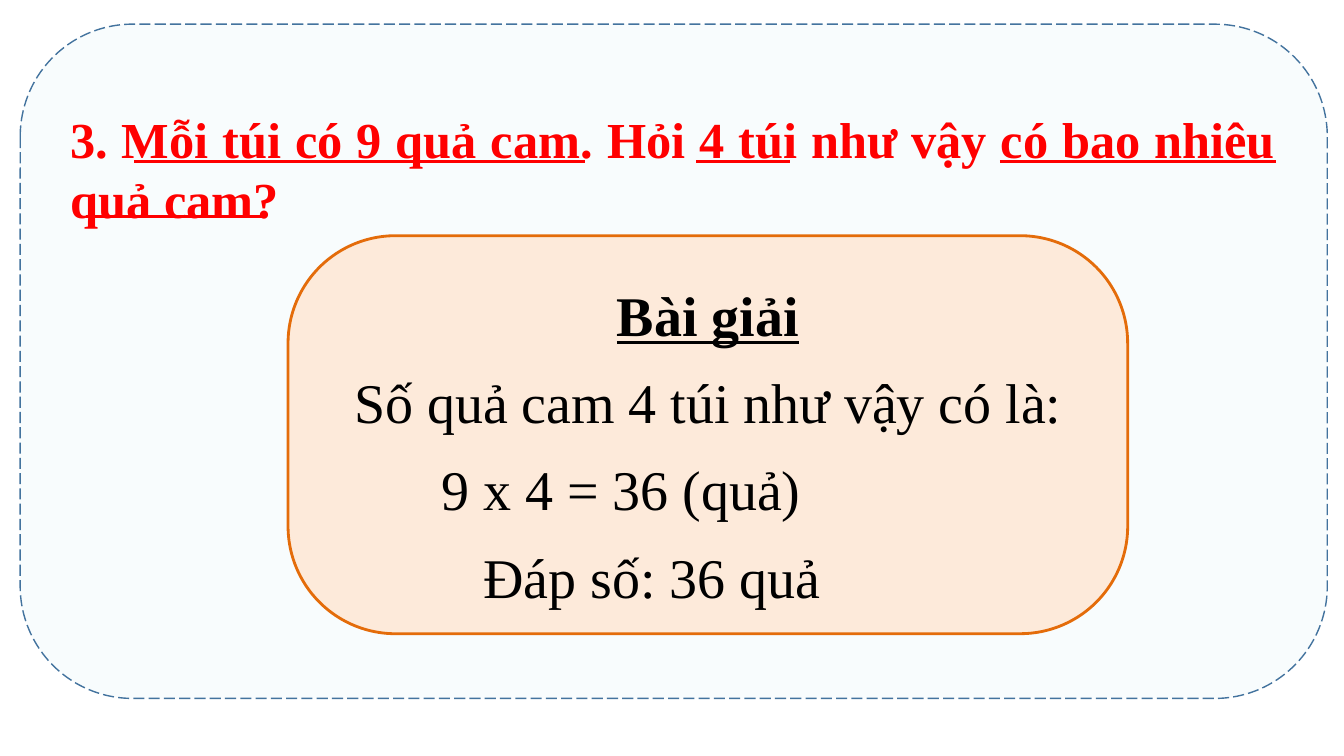
from dataclasses import dataclass

from lxml.etree import SubElement
from pptx import Presentation
from pptx.dml.color import RGBColor
from pptx.enum.dml import MSO_LINE
from pptx.enum.shapes import MSO_CONNECTOR, MSO_SHAPE
from pptx.enum.text import MSO_ANCHOR, MSO_AUTO_SIZE, PP_ALIGN
from pptx.oxml.ns import qn
from pptx.util import Cm, Pt


@dataclass(frozen=True)
class Theme:
    font: str = "Times New Roman"
    question_size: int = 36
    answer_size: int = 40
    red: str = "FF0000"
    black: str = "000000"
    panel_fill: str = "F8FCFD"
    panel_line: str = "43739E"
    answer_fill: str = "FDEADA"
    answer_line: str = "E46C0A"


THEME = Theme()

# Content: the word problem and its solution
QUESTION = "3. Mỗi túi có 9 quả cam. Hỏi 4 túi như vậy có bao nhiêu quả cam?"
SOLUTION = [
    ("Bài giải", dict(bold=True, underline=True, align=PP_ALIGN.CENTER)),
    ("Số quả cam 4 túi như vậy có là:", dict(align=PP_ALIGN.CENTER)),
    ("9 x 4 = 36 (quả)", dict(indent=2.82)),
    ("Đáp số: 36 quả", dict(indent=3.88)),
]

# Places in centimetres: left, top, width, height
PANEL = (0.51, 0.61, 32.94, 16.99)
QUESTION_BOX = (1.52, 2.59, 30.89, 3.33)
ANSWER_CARD = (7.26, 5.94, 21.16, 10.03)

# Underlined key phrases: height of the line, then (start, end) pairs
KEY_PHRASES = {
    4.06: [(3.38, 14.73), (17.55, 19.91), (25.2, 32.16)],
    5.46: [(2.16, 6.6)],
}


def color(code):
    return RGBColor.from_string(code)


def add_text(paragraph, text, *, size, ink=THEME.black, bold=False,
             underline=False, align=PP_ALIGN.LEFT, spacing=None, indent=0):
    paragraph.alignment = align
    paragraph.line_spacing = spacing
    if indent:
        paragraph._p.get_or_add_pPr().set("marL", str(Cm(indent)))
    run = paragraph.add_run()
    run.text = text
    run.font.name = THEME.font
    run.font.size = Pt(size)
    run.font.bold = bold
    run.font.underline = underline
    run.font.color.rgb = color(ink)


def add_card(slide, place, fill, outline, width):
    card = slide.shapes.add_shape(MSO_SHAPE.ROUNDED_RECTANGLE, *map(Cm, place))
    card.shadow.inherit = False
    card.fill.solid()
    card.fill.fore_color.rgb = color(fill)
    card.line.color.rgb = color(outline)
    card.line.width = Pt(width)
    return card


def add_underline(slide, start, end, height):
    underline = slide.shapes.add_connector(
        MSO_CONNECTOR.STRAIGHT, Cm(start), Cm(height), Cm(end), Cm(height))
    underline.line.color.rgb = color(THEME.red)
    underline.line.width = Pt(2.25)
    SubElement(underline._element.spPr, qn("a:effectLst"))


def main():
    deck = Presentation()
    deck.slide_width, deck.slide_height = Cm(33.87), Cm(19.05)
    slide = deck.slides.add_slide(deck.slide_layouts[6])

    # Background panel
    panel = add_card(slide, PANEL, THEME.panel_fill, THEME.panel_line, 1)
    panel.line.dash_style = MSO_LINE.LONG_DASH

    # Question
    question = slide.shapes.add_textbox(*map(Cm, QUESTION_BOX)).text_frame
    question.word_wrap = True
    question.auto_size = MSO_AUTO_SIZE.SHAPE_TO_FIT_TEXT
    add_text(question.paragraphs[0], QUESTION, size=THEME.question_size,
             ink=THEME.red, bold=True, align=PP_ALIGN.JUSTIFY)

    # Key phrases
    for height, spans in KEY_PHRASES.items():
        for start, end in spans:
            add_underline(slide, start, end, height)

    # Solution card
    answer = add_card(slide, ANSWER_CARD, THEME.answer_fill, THEME.answer_line, 2)
    answer.adjustments[0] = 0.27
    solution = answer.text_frame
    solution.word_wrap = True
    solution.vertical_anchor = MSO_ANCHOR.MIDDLE
    for number, (text, style) in enumerate(SOLUTION):
        paragraph = solution.add_paragraph() if number else solution.paragraphs[0]
        add_text(paragraph, text, size=THEME.answer_size, spacing=1.3, **style)

    deck.save("out.pptx")


if __name__ == "__main__":
    main()
